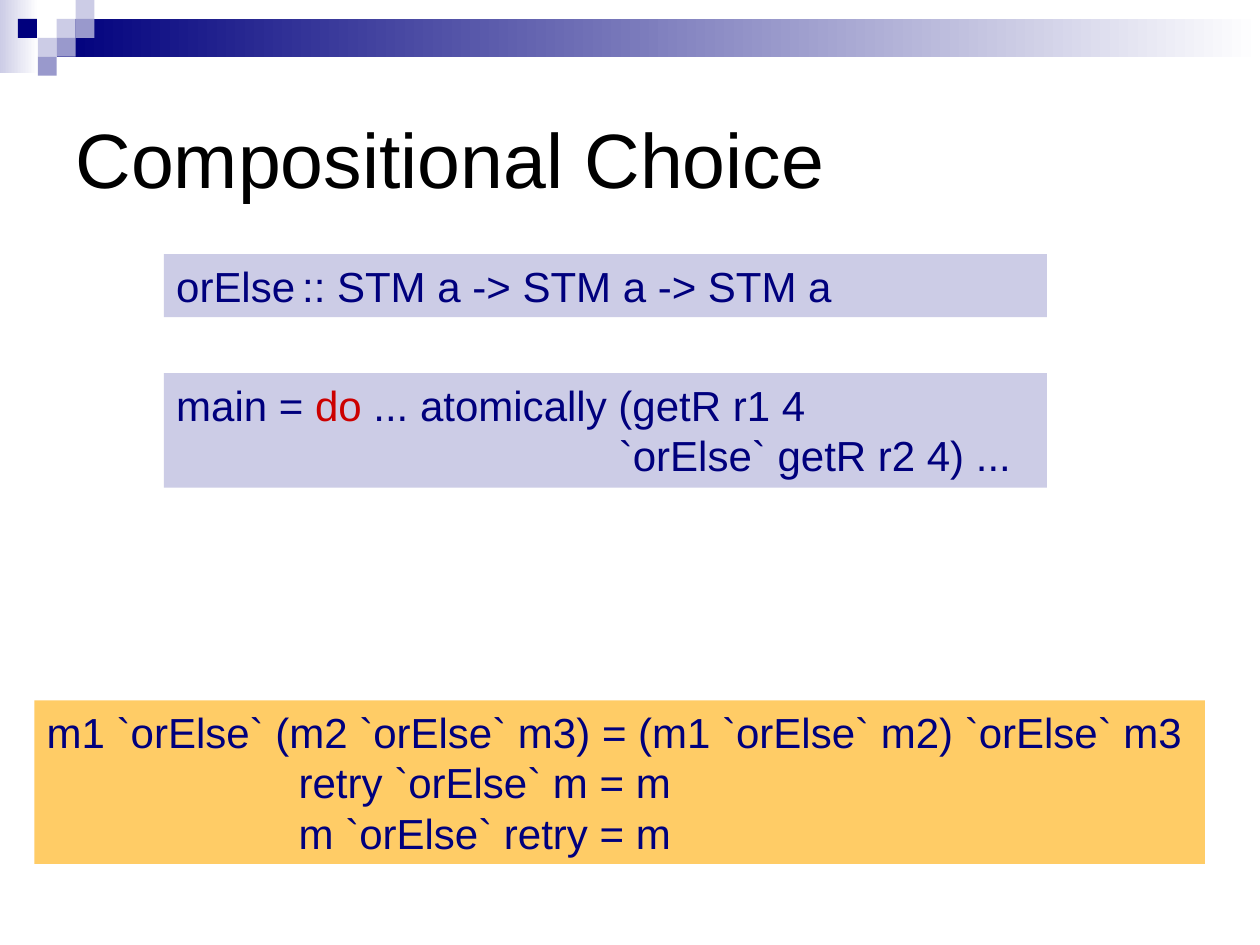
from pptx import Presentation
from pptx import util as u
from pptx.dml.color import RGBColor
from pptx.enum import shapes, text

NAVY = RGBColor(0x00, 0x00, 0x7D)
PERIWINKLE = RGBColor(0x99, 0x99, 0xCC)
LAVENDER = RGBColor(0xCC, 0xCC, 0xE6)
AMBER = RGBColor(0xFF, 0xCC, 0x66)
RED = RGBColor(0xCC, 0x00, 0x00)
BLACK = RGBColor(0x00, 0x00, 0x00)
WHITE = RGBColor(0xFF, 0xFF, 0xFF)

TILE = 10.8
TILES = [  # column, row, colour
    (3, 1, LAVENDER), (4, 0, LAVENDER), (4, 1, PERIWINKLE),
    (2, 2, LAVENDER), (0.95, 1, NAVY), (3, 2, PERIWINKLE),
    (2, 3, PERIWINKLE),
]


class SlideBuilder:
    """Holds the text style and the slide being built."""

    font = "Arial"
    title_size = 44
    code_size = 24

    def __init__(self, slide):
        self.slide = slide

    def style(self, span, size, color):
        span.font.name = self.font
        span.font.size = u.Pt(size)
        span.font.color.rgb = color

    def title(self, wording, left, top, width, height):
        box = self.slide.shapes.title
        box.left, box.top = u.Pt(left), u.Pt(top)
        box.width, box.height = u.Pt(width), u.Pt(height)
        frame = box.text_frame
        frame.text = wording
        frame.vertical_anchor = text.MSO_ANCHOR.MIDDLE
        para = frame.paragraphs[0]
        para.alignment = text.PP_ALIGN.LEFT
        self.style(para.runs[0], self.title_size, BLACK)

    def rectangle(self, left, top, width, height, color):
        box = self.slide.shapes.add_shape(
            shapes.MSO_SHAPE.RECTANGLE,
            u.Pt(left), u.Pt(top), u.Pt(width), u.Pt(height))
        box.shadow.inherit = False
        box.line.fill.background()
        box.fill.solid()
        box.fill.fore_color.rgb = color
        return box

    def fading_bar(self, left, top, width, height, color):
        """Add a rectangle that fades from color to white, left to right."""
        fill = self.rectangle(left, top, width, height, color).fill
        fill.gradient()
        fill.gradient_angle = 0
        for stop, shade in zip(fill.gradient_stops, (color, WHITE)):
            stop.color.rgb = shade

    def code_box(self, left, top, width, height, color, lines):
        """Add a code panel; each line is (indent, [(words, colour), ...])."""
        frame = self.rectangle(left, top, width, height, color).text_frame
        frame.word_wrap = True
        frame.auto_size = text.MSO_AUTO_SIZE.SHAPE_TO_FIT_TEXT
        frame.vertical_anchor = text.MSO_ANCHOR.TOP
        for number, (indent, spans) in enumerate(lines):
            para = frame.add_paragraph() if number else frame.paragraphs[0]
            para.alignment = text.PP_ALIGN.LEFT
            para._p.get_or_add_pPr().set("marL", str(u.Pt(indent)))
            for words, span_color in spans:
                span = para.add_run()
                span.text = words
                self.style(span, self.code_size, span_color)


def main():
    deck = Presentation()
    deck.slide_width, deck.slide_height = u.Pt(720), u.Pt(540)
    page = SlideBuilder(deck.slides.add_slide(deck.slide_layouts[5]))

    page.fading_bar(0, 0, 22, 42, LAVENDER)
    page.fading_bar(3 * TILE, TILE, 720 - 3 * TILE, 2 * TILE, NAVY)
    for column, row, color in TILES:
        page.rectangle(column * TILE, row * TILE, TILE, TILE, color)

    page.title("Compositional Choice", 36, 36, 648, 108)

    page.code_box(93.6, 145.3, 504.6, 36, LAVENDER, [
        (0, [("orElse\t:: STM a -> STM a -> STM a", NAVY)]),
    ])
    page.code_box(93.6, 213.2, 504.6, 65.5, LAVENDER, [
        (0, [("main = ", NAVY), ("do", RED),
             (" ... atomically (getR r1 4", NAVY)]),
        (253, [("`orElse` getR r2 4) ...", NAVY)]),
    ])
    page.code_box(19.6, 400.2, 669, 93.5, AMBER, [
        (0, [("m1 `orElse` (m2 `orElse` m3) = (m1 `orElse` m2) `orElse` m3",
              NAVY)]),
        (144, [("retry `orElse` m = m", NAVY)]),
        (144, [("m `orElse` retry = m", NAVY)]),
    ])

    deck.save("out.pptx")


if __name__ == "__main__":
    main()
